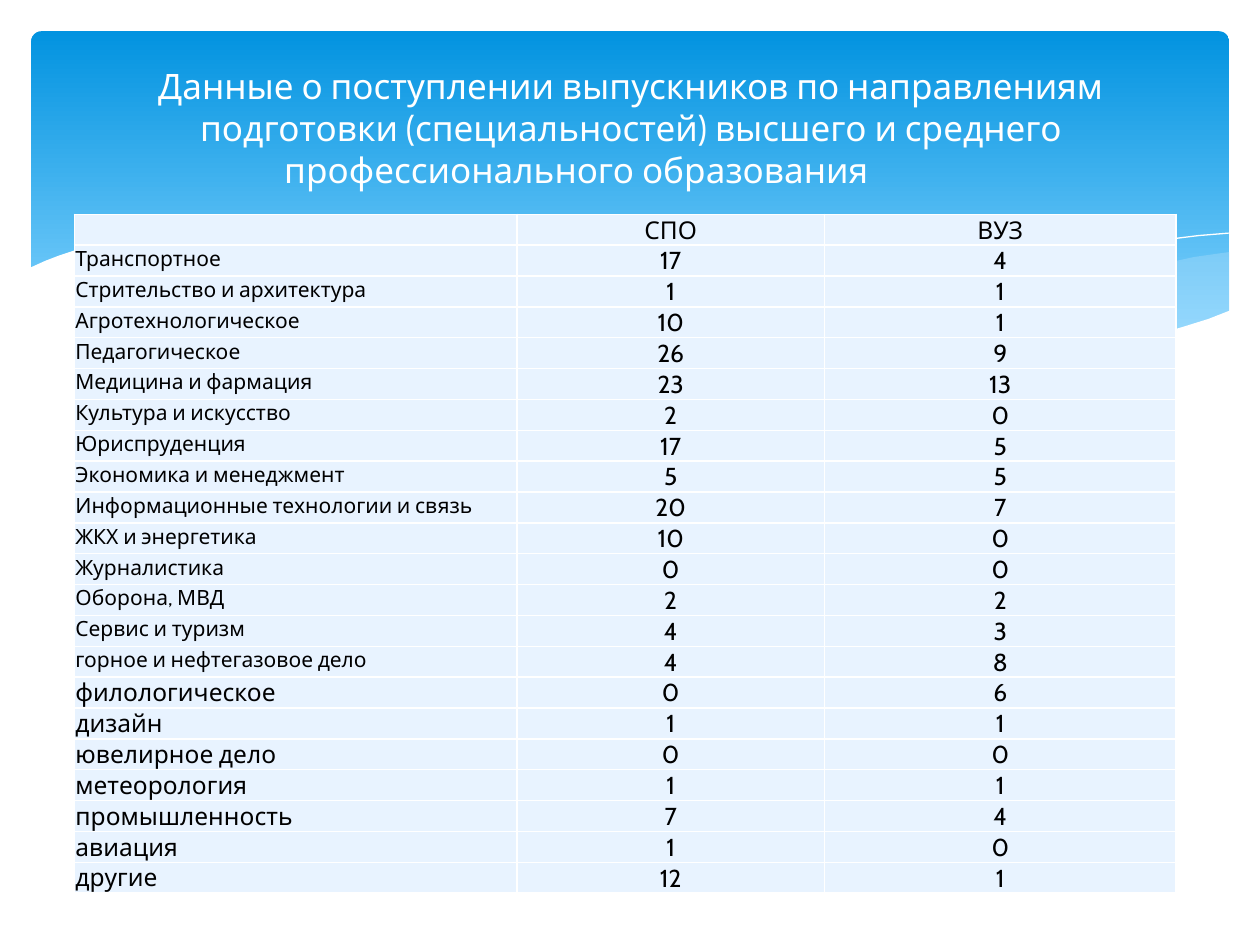
"""Build a slide with a table of graduate admissions by field of study."""
import dataclasses
import typing

import lxml.etree
import pptx
import pptx.dml.color
import pptx.enum.dml
import pptx.enum.shapes
import pptx.enum.text
import pptx.oxml.ns
import pptx.util

Cm = pptx.util.Cm
Points = list[tuple[float, float]]
FONT = "Cabin"
COLORS = {
    "banner_top": "0293E0",
    "banner_bottom": "83D3FE",
    "wave": "C6E7FC",
    "white": "FFFFFF",
    "cell": "E8F3FF",
    "text": "000000",
}
TITLE = (
    "Данные о поступлении выпускников по направлениям подготовки "
    "(специальностей) высшего и среднего профессионального образования \t\t"
)


@dataclasses.dataclass
class Wave:
    points: Points
    color: str
    opacity: int = 100
    filled: bool = True


@dataclasses.dataclass
class Field:
    name: str
    college: str
    university: str
    size: int = 12


WAVES = [
    Wave([
        (24.79, 5.08), (24.08, 5.18), (23.39, 5.33), (22.63, 5.49), (21.87, 5.66), (20.45, 6.02),
        (19.13, 6.3), (17.93, 6.53), (16.79, 6.73), (17.55, 6.83), (18.59, 6.96), (19.53, 7.04),
        (20.68, 7.06), (21.69, 7.01), (22.58, 6.91), (23.39, 6.73), (24.1, 6.53), (24.79, 6.27),
    ], "wave", 29),
    Wave([
        (22.68, 6.93), (21.26, 6.73), (19.69, 6.45), (17.93, 6.1), (15.98, 5.64), (14.45, 5.28),
        (13.06, 5.03), (11.81, 4.85), (10.67, 4.75), (9.65, 4.7), (8.74, 4.72), (7.95, 4.78),
        (7.26, 4.85), (8.69, 5.05), (10.26, 5.36), (12.47, 5.89), (14.38, 6.3), (16.1, 6.63),
        (17.65, 6.86), (19, 7.01), (20.22, 7.06), (21.29, 7.06),
    ], "wave", 40),
    Wave([
        (7.85, 4.95), (8.74, 4.83), (10.19, 4.75), (11.43, 4.78), (12.95, 4.88),
        (14.78, 5.08), (16.89, 5.41), (19.3, 5.92), (21.11, 6.38), (23.04, 6.91),
    ], "white", filled=False),
    Wave([
        (15.57, 6.53), (17.65, 5.97), (19, 5.66), (20.47, 5.33),
        (22, 5.05), (23.11, 4.88), (24.16, 4.75), (24.77, 4.7),
    ], "white", filled=False),
    Wave([
        (24.82, 6.25), (24.36, 6.43), (23.88, 6.58), (23.37, 6.73), (22.83, 6.83), (22.23, 6.93),
        (21.59, 6.99), (20.9, 7.04), (20.14, 7.01), (19.33, 6.99), (18.44, 6.91), (17.48, 6.81),
        (16.46, 6.65), (15.32, 6.45), (14.1, 6.22), (12.78, 5.92), (11.35, 5.59), (9.93, 5.26),
        (8.64, 5), (7.42, 4.83), (6.35, 4.72), (5.36, 4.67), (4.5, 4.67), (3.71, 4.7),
        (3.02, 4.75), (2.41, 4.85), (1.93, 4.95), (1.5, 5.05), (1.17, 5.16), (0.91, 5.26),
        (0.58, 5.41), (0.58, 8.36), (24.82, 8.36),
    ], "white"),
]
FIELDS = [
    Field("", "СПО", "ВУЗ", 14),
    Field("Транспортное", "17", "4"),
    Field("Стрительство и архитектура", "1", "1"),
    Field("Агротехнологическое", "10", "1"),
    Field("Педагогическое", "26", "9"),
    Field("Медицина и фармация", "23", "13"),
    Field("Культура и искусство", "2", "0"),
    Field("Юриспруденция", "17", "5"),
    Field("Экономика и менеджмент", "5", "5"),
    Field("Информационные технологии и связь", "20", "7"),
    Field("ЖКХ и энергетика", "10", "0"),
    Field("Журналистика", "0", "0"),
    Field("Оборона, МВД", "2", "2"),
    Field("Сервис и туризм", "4", "3"),
    Field("горное и нефтегазовое дело", "4", "8"),
    Field("филологическое", "0", "6", 14),
    Field("дизайн", "1", "1", 14),
    Field("ювелирное дело", "0", "0", 14),
    Field("метеорология", "1", "1", 14),
    Field("промышленность", "7", "4", 14),
    Field("авиация", "1", "0", 14),
    Field("другие", "12", "1", 14),
]


def rgb(name: str) -> pptx.dml.color.RGBColor:
    return pptx.dml.color.RGBColor.from_string(COLORS[name])


def add_child(parent: typing.Any, tag: str, **attributes: str) -> typing.Any:
    return lxml.etree.SubElement(parent, pptx.oxml.ns.qn(tag), attributes)


def add_text(paragraph: typing.Any, text: str, size: int, color: str) -> None:
    run = paragraph.add_run()
    run.text = text
    run.font.name = FONT
    run.font.size = pptx.util.Pt(size)
    run.font.color.rgb = rgb(color)


def add_banner(slide: typing.Any) -> None:
    banner = slide.shapes.add_shape(
        pptx.enum.shapes.MSO_SHAPE.ROUNDED_RECTANGLE, Cm(0.63), Cm(0.63), Cm(24.15), Cm(6.86)
    )
    banner.adjustments[0] = 0.03
    banner.shadow.inherit = False
    banner.line.fill.background()
    banner.fill.gradient()
    banner.fill.gradient_angle = 270
    stops = zip(banner.fill.gradient_stops, (0, 0.9), ("banner_top", "banner_bottom"))
    for stop, position, color in stops:
        stop.position = position
        stop.color.rgb = rgb(color)


def add_wave(slide: typing.Any, wave: Wave) -> None:
    start, *others = [(Cm(x), Cm(y)) for x, y in wave.points]
    builder = slide.shapes.build_freeform(*start)
    builder.add_line_segments(others, close=wave.filled)
    shape = builder.convert_to_shape()
    shape.shadow.inherit = False
    if not wave.filled:
        shape.fill.background()
        shape.line.color.rgb = rgb(wave.color)
        shape.line.width = 0
        return
    shape.line.fill.background()
    shape.fill.solid()
    shape.fill.fore_color.rgb = rgb(wave.color)
    if wave.opacity < 100:
        color = shape.element.spPr.find(".//" + pptx.oxml.ns.qn("a:srgbClr"))
        add_child(color, "a:alpha", val=str(wave.opacity * 1000))


def format_cell(cell: typing.Any, text: str, size: int, centered: bool) -> None:
    cell.margin_left = cell.margin_right = cell.margin_top = Cm(0.02)
    cell.margin_bottom = 0
    paragraph = cell.text_frame.paragraphs[0]
    if centered:
        cell.vertical_anchor = pptx.enum.text.MSO_ANCHOR.MIDDLE
        paragraph.alignment = pptx.enum.text.PP_ALIGN.CENTER
    if text:
        add_text(paragraph, text, size, "text")
    else:
        add_child(paragraph._p, "a:endParaRPr", sz=str(size * 100))
    properties = cell._tc.get_or_add_tcPr()
    for side in ("a:lnL", "a:lnR", "a:lnT", "a:lnB"):
        border = add_child(properties, side, w=str(pptx.util.Pt(1)))
        add_child(add_child(border, "a:solidFill"), "a:srgbClr", val=COLORS["white"])
    cell.fill.solid()
    cell.fill.fore_color.rgb = rgb("cell")


def add_field_table(slide: typing.Any) -> None:
    widths, row_height = (8.92, 6.2, 7.09), 0.62
    table = slide.shapes.add_table(
        len(FIELDS), len(widths), Cm(1.5), Cm(4.32), Cm(sum(widths)), Cm(row_height * len(FIELDS))
    ).table
    table.first_row = table.horz_banding = False
    for column, width in zip(table.columns, widths):
        column.width = Cm(width)
    for row, field in zip(table.rows, FIELDS):
        row.height = Cm(row_height)
        format_cell(row.cells[0], field.name, field.size, False)
        format_cell(row.cells[1], field.college, 14, True)
        format_cell(row.cells[2], field.university, 14, True)


def format_title(slide: typing.Any) -> None:
    title = slide.shapes.title
    title.left, title.top, title.width, title.height = Cm(1.3), Cm(1.12), Cm(22.83), Cm(2.9)
    title.text_frame.vertical_anchor = pptx.enum.text.MSO_ANCHOR.MIDDLE
    paragraph = title.text_frame.paragraphs[0]
    paragraph.alignment = pptx.enum.text.PP_ALIGN.CENTER
    add_text(paragraph, TITLE, 20, "white")
    slide.shapes.element.append(title.element)


def main() -> None:
    presentation = pptx.Presentation()
    presentation.slide_width, presentation.slide_height = Cm(25.4), Cm(19.05)
    slide = presentation.slides.add_slide(presentation.slide_layouts[5])
    add_banner(slide)
    for wave in WAVES:
        add_wave(slide, wave)
    add_field_table(slide)
    format_title(slide)
    presentation.save("out.pptx")


if __name__ == "__main__":
    main()
